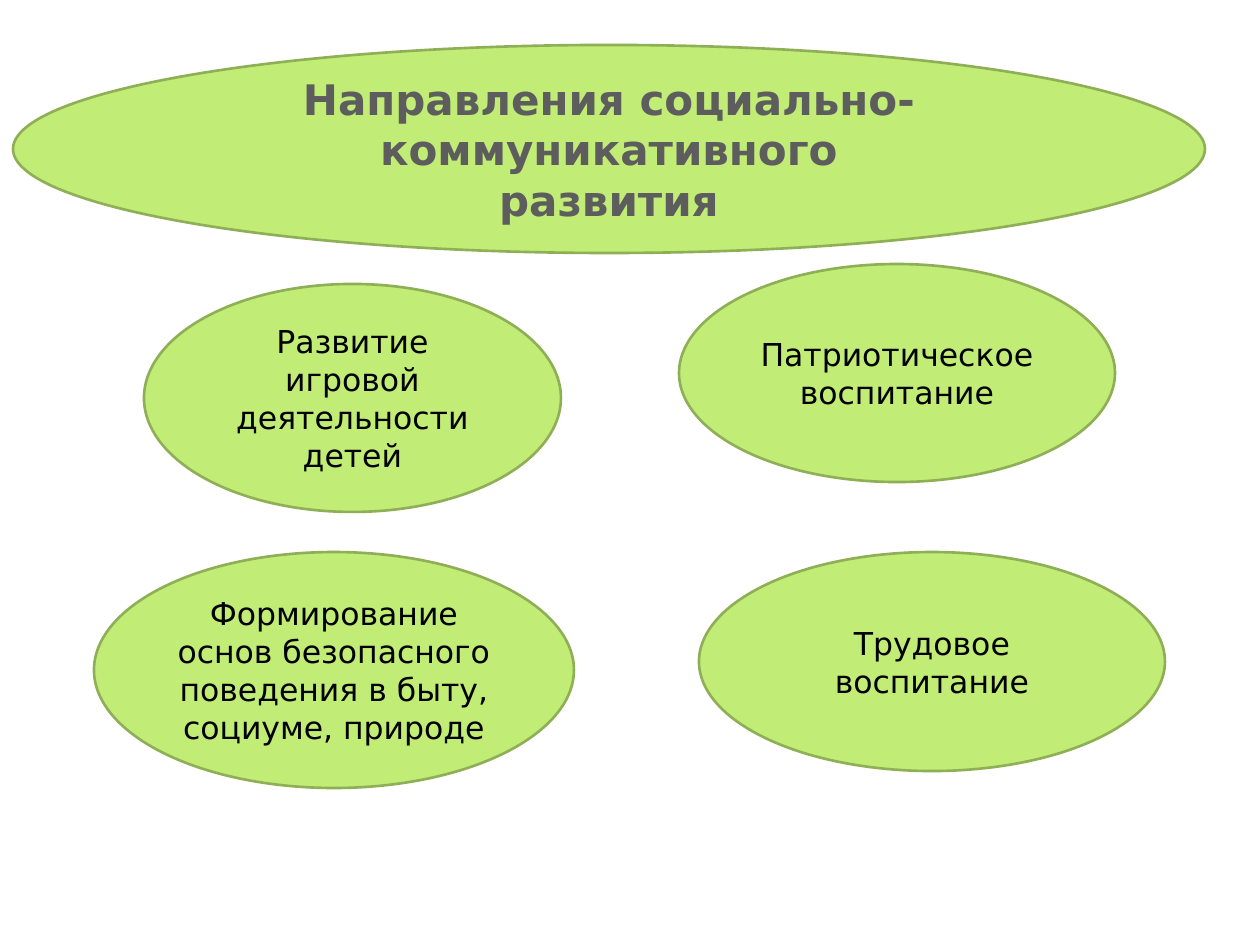
from pptx import Presentation
from pptx.dml.color import RGBColor
from pptx.enum.shapes import MSO_SHAPE
from pptx.enum.text import MSO_ANCHOR, PP_ALIGN
from pptx.util import Inches, Pt

ELLIPSE = MSO_SHAPE.OVAL
MIDDLE = MSO_ANCHOR.MIDDLE
CENTER = PP_ALIGN.CENTER

LIME = RGBColor(0xC1, 0xEC, 0x76)
OLIVE = RGBColor(0x8F, 0xAF, 0x57)
GRAY = RGBColor(0x5D, 0x5D, 0x5D)
BLACK = RGBColor(0x00, 0x00, 0x00)
FONT = "DejaVu Sans"
PX = Inches(1) / 126

presentation = Presentation()
presentation.slide_width = Inches(10)
presentation.slide_height = Inches(7.5)
slide = presentation.slides.add_slide(presentation.slide_layouts[6])


def add_oval(text, box, size=18, color=BLACK, bold=False):
    oval = slide.shapes.add_shape(ELLIPSE, *[round(length * PX) for length in box])
    oval.shadow.inherit = False
    oval.fill.solid()
    oval.fill.fore_color.rgb = LIME
    oval.line.color.rgb = OLIVE
    oval.line.width = Pt(1.5)
    frame = oval.text_frame
    frame.word_wrap = True
    frame.vertical_anchor = MIDDLE
    frame.text = text
    for paragraph in frame.paragraphs:
        paragraph.alignment = CENTER
        for run in paragraph.runs:
            run.font.name = FONT
            run.font.size = Pt(size)
            run.font.bold = bold
            run.font.color.rgb = color


add_oval(
    "Направления социально-коммуникативного\nразвития",
    (13, 45, 1192, 208),
    size=24,
    color=GRAY,
    bold=True,
)

directions = [
    ("Развитие игровой деятельности детей", (144, 284, 417, 228)),
    ("Патриотическое воспитание", (679, 264, 436, 218)),
    ("Трудовое воспитание", (699, 552, 466, 219)),
    (
        "Формирование основ безопасного поведения в быту, социуме, природе",
        (94, 552, 480, 236),
    ),
]
for direction, box in directions:
    add_oval(direction, box)

presentation.save("out.pptx")
